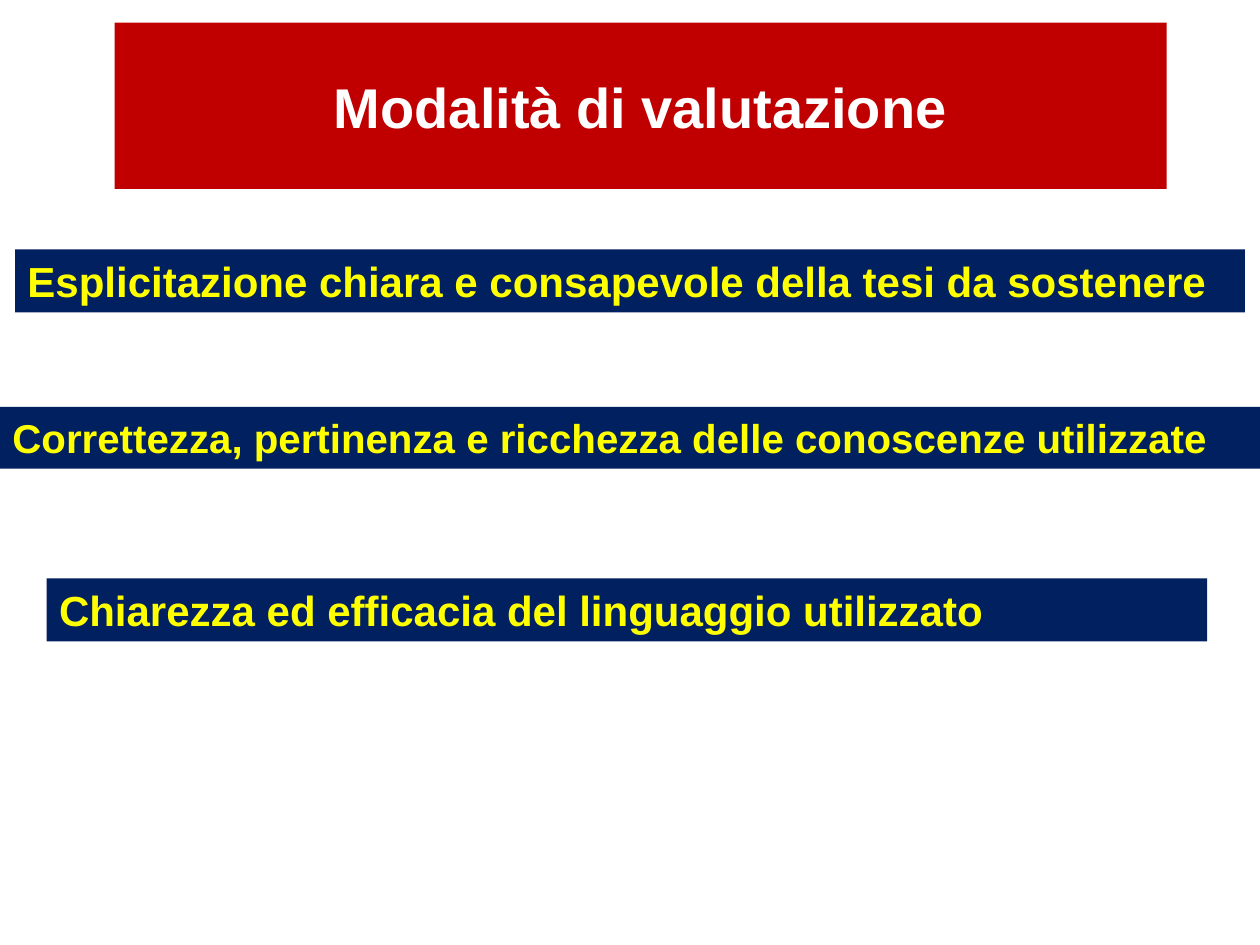
from dataclasses import dataclass

from pptx import Presentation
from pptx.dml.color import RGBColor
from pptx.enum import text
from pptx.util import Inches, Pt

COLORS = {"red": "C00000", "navy": "002060", "yellow": "FFFF00", "white": "FFFFFF"}


@dataclass(frozen=True)
class Banner:
    label: str
    left: float
    top: float
    width: float
    height: float
    size: int
    fill: str = "navy"
    color: str = "yellow"
    align: text.PP_ALIGN = text.PP_ALIGN.LEFT
    anchor: text.MSO_ANCHOR = text.MSO_ANCHOR.TOP


TITLE = Banner("Modalità di valutazione", 0.91, 0.18, 8.35, 1.32, 32,
               "red", "white", text.PP_ALIGN.CENTER, text.MSO_ANCHOR.MIDDLE)
CRITERIA = [
    Banner("Esplicitazione chiara e consapevole della tesi da sostenere",
           0.12, 1.98, 9.76, 0.5, 24),
    Banner("Correttezza, pertinenza e ricchezza delle conoscenze utilizzate",
           0, 3.23, 10, 0.49, 23),
    Banner("Chiarezza ed efficacia del linguaggio utilizzato",
           0.37, 4.59, 9.21, 0.5, 24),
]


def add_banner(shapes, banner: Banner) -> None:
    sp = shapes.add_textbox(Inches(banner.left), Inches(banner.top),
                            Inches(banner.width), Inches(banner.height))
    sp.fill.solid()
    sp.fill.fore_color.rgb = RGBColor.from_string(COLORS[banner.fill])
    tf = sp.text_frame
    tf.word_wrap = True
    tf.vertical_anchor = banner.anchor
    p = tf.paragraphs[0]
    p.text = banner.label
    p.alignment = banner.align
    p.font.name = "Arial"
    p.font.size = Pt(banner.size)
    p.font.bold = True
    p.font.color.rgb = RGBColor.from_string(COLORS[banner.color])


def main() -> None:
    prs = Presentation()
    prs.slide_width, prs.slide_height = Inches(10), Inches(7.5)
    s = prs.slides.add_slide(prs.slide_layouts[6])
    for banner in [TITLE, *CRITERIA]:
        add_banner(s.shapes, banner)
    prs.save("out.pptx")


if __name__ == "__main__":
    main()
